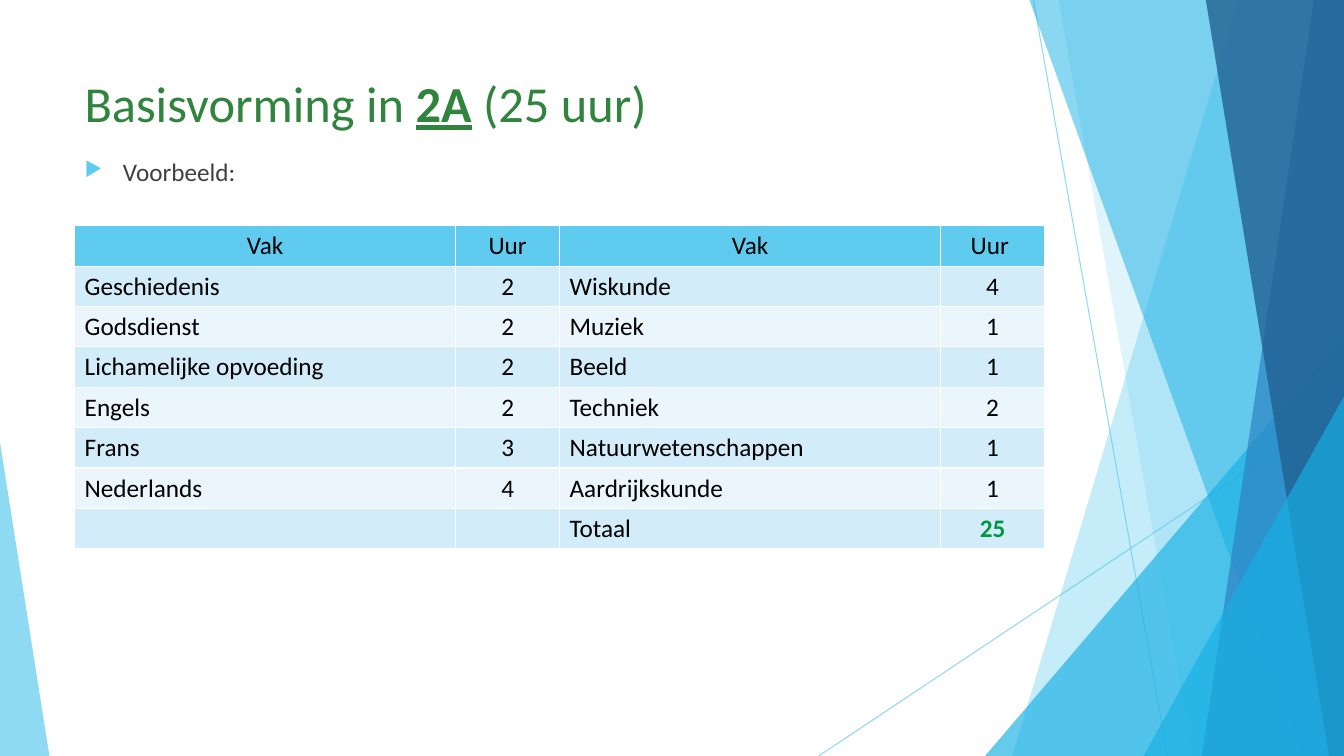
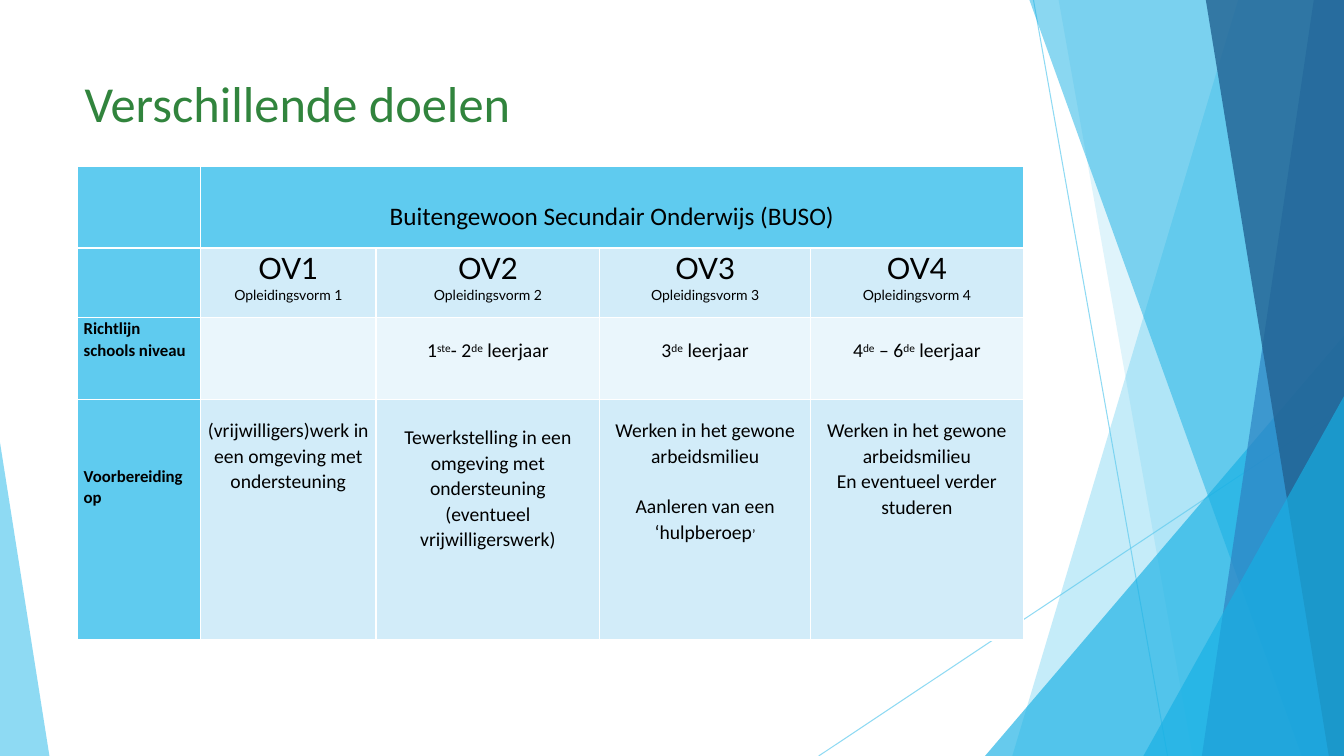
from lxml import etree
from pptx import Presentation
from pptx.dml.color import RGBColor
from pptx.enum import shapes, text
from pptx.oxml.ns import qn
from pptx.util import Inches, Pt

COLORS = {
    "title": "31843D", "body": "404040", "black": "000000", "total": "009644",
    "sky": "5FCBEF", "cyan": "17B0E4", "blue": "2E83C3", "navy": "226292",
    "dark_row": "D2ECF9", "light_row": "EAF6FC",
}
FONT = "Calibri"
WIDTH, HEIGHT = 13.33, 7.5
CENTER, LEFT = text.PP_ALIGN.CENTER, text.PP_ALIGN.LEFT

RAYS = [(10.25, 0, 11.58, 7.5), (13.33, 4.03, 8.12, 7.5)]
# Bands run to the right edge: colour, opacity, x at the top, x at the bottom.
# Triangles: colour, opacity, left, top, width, height, peak position.
FACETS = [
    ("sky", 36, 12.28, 10.04),
    ("sky", 20, 10.5, 11.83),
    ("cyan", 66, 9.77, 3.33, 3.56, 4.17, 1),
    ("cyan", 50, 10.21, 12.91),
    ("blue", 70, 13.03, 11.92),
    ("navy", 80, 11.96, 13.18),
    ("cyan", 66, 11.34, 3.93, 1.99, 3.57, 1),
    ("sky", 70, 0, 4.39, 0.49, 3.11, 0),
]


def write(paragraph, words, size, color="black", bold=False, font=FONT, align=LEFT):
    """Add words to the paragraph; parts between ^ marks are superscript."""
    paragraph.alignment = align
    for index, part in enumerate(words.split("^")):
        run = paragraph.add_run()
        run.text = part
        run.font.size, run.font.name, run.font.bold = Pt(size), font, bold
        run.font.color.rgb = RGBColor.from_string(COLORS[color])
        if index % 2:
            run.font._element.set("baseline", "30000")


def start_slide(title_parts):
    """Add a slide with the faceted backdrop; every second title part is stressed."""
    slide = prs.slides.add_slide(prs.slide_layouts[6])
    translucent = []
    for ends in RAYS:
        ray = slide.shapes.add_connector(shapes.MSO_CONNECTOR.STRAIGHT, *map(Inches, ends))
        ray.line.color.rgb = RGBColor.from_string(COLORS["sky"])
        ray.line.width = Pt(0.75)
        etree.SubElement(ray.element.spPr, qn("a:effectLst"))
        translucent.append((ray, 70))
    for color, opacity, *geometry in FACETS:
        if len(geometry) == 2:
            top_x, bottom_x = geometry
            outline = slide.shapes.build_freeform(Inches(top_x), 0, scale=1.0)
            corners = [(WIDTH, 0), (WIDTH, HEIGHT), (bottom_x, HEIGHT)]
            outline.add_line_segments([(Inches(x), Inches(y)) for x, y in corners])
            facet = outline.convert_to_shape()
        else:
            *box, peak = geometry
            facet = slide.shapes.add_shape(
                shapes.MSO_SHAPE.ISOSCELES_TRIANGLE, *map(Inches, box))
            facet.adjustments[0] = peak
        facet.shadow.inherit = False
        facet.fill.solid()
        facet.fill.fore_color.rgb = RGBColor.from_string(COLORS[color])
        facet.line.fill.background()
        translucent.append((facet, opacity))
    for shape, opacity in translucent:
        paint = shape.element.spPr.find(".//" + qn("a:srgbClr"))
        etree.SubElement(paint, qn("a:alpha")).set("val", str(opacity * 1000))

    title = slide.shapes.add_textbox(*map(Inches, (0.74, 0.67, 9.4, 0.96))).text_frame
    title.word_wrap = True
    for index, part in enumerate(title_parts):
        write(title.paragraphs[0], part, 36, "title", bold=index % 2 == 1)
        title.paragraphs[0].runs[-1].font.underline = index % 2 == 1
    return slide


prs = Presentation()
prs.slide_width, prs.slide_height = Inches(WIDTH), Inches(HEIGHT)

# Slide 1: hours per subject
slide = start_slide(["Basisvorming in ", "2A", " (25 uur)"])
intro = slide.shapes.add_textbox(*map(Inches, (0.74, 1.5, 9.4, 0.5))).text_frame
intro.word_wrap = True
write(intro.paragraphs[0], "Voorbeeld:", 18, "body")
bullet = intro.paragraphs[0]._p.get_or_add_pPr()
bullet.set("marL", str(Inches(0.38)))
bullet.set("indent", str(-Inches(0.38)))
bullet_color = etree.SubElement(bullet, qn("a:buClr"))
etree.SubElement(bullet_color, qn("a:srgbClr")).set("val", COLORS["sky"])
etree.SubElement(bullet, qn("a:buSzPct")).set("val", "80000")
etree.SubElement(bullet, qn("a:buChar")).set("char", "▶")

HOURS = [
    ("Vak", "Uur", "Vak", "Uur "),
    ("Geschiedenis", "2", "Wiskunde", "4"),
    ("Godsdienst", "2", "Muziek", "1"),
    ("Lichamelijke opvoeding", "2", "Beeld", "1"),
    ("Engels", "2", "Techniek", "2"),
    ("Frans", "3", "Natuurwetenschappen", "1"),
    ("Nederlands", "4", "Aardrijkskunde", "1"),
    ("", "", "Totaal", "25"),
]
hours = slide.shapes.add_table(
    len(HOURS), 4, *map(Inches, (0.74, 2.24, 9.62, 3.2))).table
for column, width in zip(hours.columns, (3.78, 1.03) * 2):
    column.width = Inches(width)
for r, row in enumerate(HOURS):
    row_color = "sky" if r == 0 else "dark_row" if r % 2 else "light_row"
    for c, words in enumerate(row):
        cell = hours.cell(r, c)
        cell.fill.solid()
        cell.fill.fore_color.rgb = RGBColor.from_string(COLORS[row_color])
        if words:
            is_total = words == "25"
            write(cell.text_frame.paragraphs[0], words, 18,
                  "total" if is_total else "black", bold=is_total,
                  align=CENTER if r == 0 or c % 2 else LEFT)

# Slide 2: goals per form of education
slide = start_slide(["Verschillende doelen"])
# Each cell: space above the text in inches, then its paragraphs
FORMS = [(0, [f"OV{n}", f"Opleidingsvorm {n}"]) for n in range(1, 5)]
GOALS = [
    [None, (0.33, ["Buitengewoon Secundair Onderwijs (BUSO)"]), None, None, None],
    [None, *FORMS],
    [(0, ["Richtlijn schools niveau"]), None,
     (0.2, ["1^ste^- 2^de^ leerjaar"]),
     (0.2, ["3^de^ leerjaar"]),
     (0.2, ["4^de^ – 6^de^ leerjaar"])],
    [(0.65, ["Voorbereiding op"]),
     (0.18, ["(vrijwilligers)werk in een omgeving met ondersteuning"]),
     (0.25, ["Tewerkstelling in een omgeving met ondersteuning",
             "(eventueel vrijwilligerswerk)"]),
     (0.18, ["Werken in het gewone arbeidsmilieu", "Aanleren van een ‘hulpberoep"]),
     (0.18, ["Werken in het gewone arbeidsmilieu", "En eventueel verder studeren"])],
]
goals = slide.shapes.add_table(4, 5, *map(Inches, (0.77, 1.65, 9.38, 4.7))).table
for column, width in zip(goals.columns, (1.22, 1.74, 2.22, 2.09, 2.11)):
    column.width = Inches(width)
for row, height in zip(goals.rows, (0.81, 0.69, 0.81, 2.39)):
    row.height = Inches(height)
goals.cell(0, 1).merge(goals.cell(0, 4))
for r, row in enumerate(GOALS):
    for c, content in enumerate(row):
        cell = goals.cell(r, c)
        cell_color = "sky" if r == 0 or c == 0 else "dark_row" if r % 2 else "light_row"
        cell.fill.solid()
        cell.fill.fore_color.rgb = RGBColor.from_string(COLORS[cell_color])
        if content is None:
            continue
        space_above, lines = content
        cell.margin_left = cell.margin_right = Inches(0.06)
        cell.margin_top, cell.margin_bottom = Inches(space_above), 0
        for n, line in enumerate(lines):
            frame = cell.text_frame
            paragraph = frame.add_paragraph() if n else frame.paragraphs[0]
            paragraph.line_spacing = 1.07
            if r == 1:
                size = 10 if n else 21
            else:
                size = 18 if r == 0 else 12 if c == 0 else 14
            write(paragraph, line, size, bold=c == 0, font="Lato" if r == 1 else FONT,
                  align=CENTER if c else LEFT)

profession = goals.cell(3, 3).text_frame.paragraphs[-1]
profession.space_before = Pt(18)
write(profession, "’", 10, align=CENTER)

prs.save("out.pptx")
